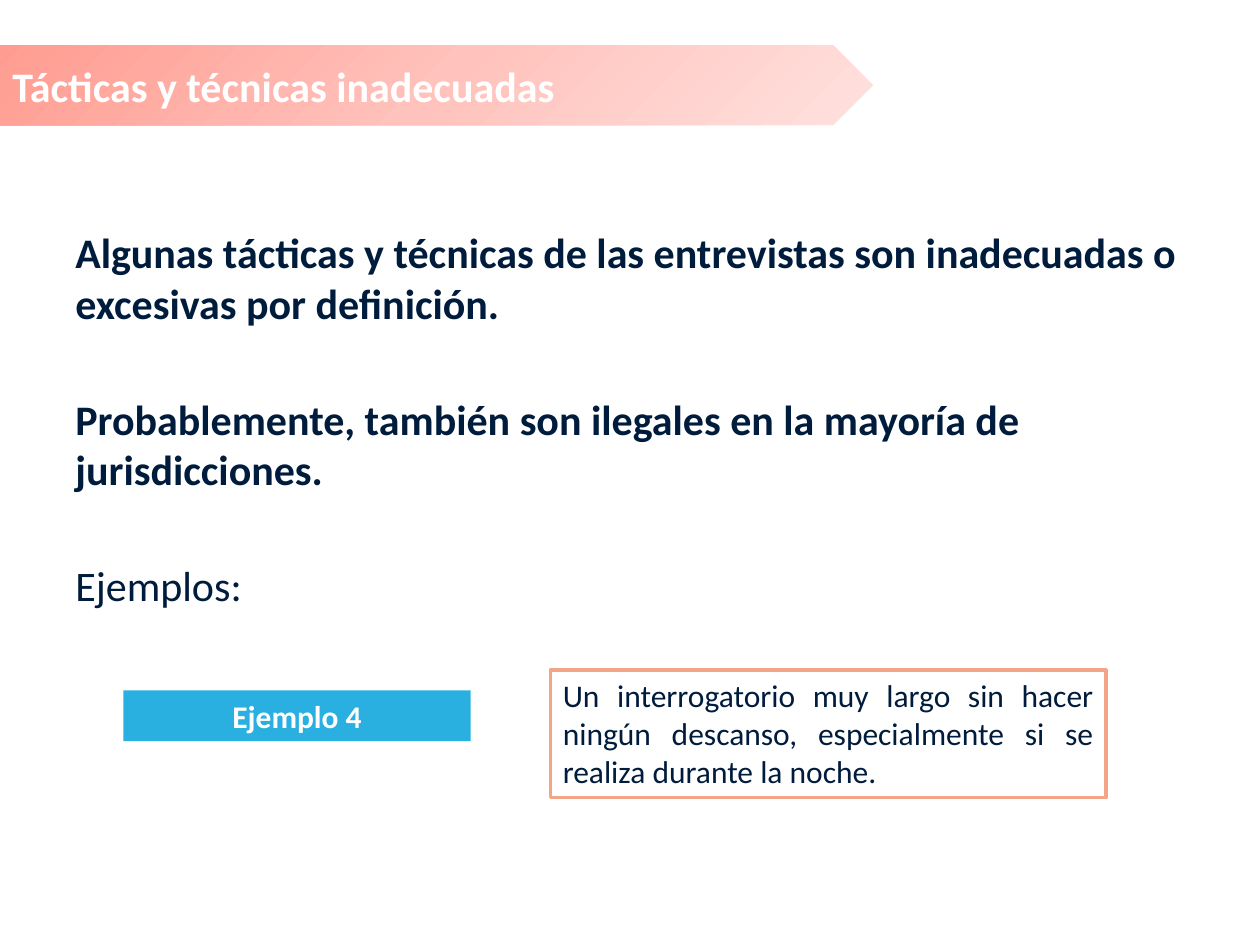
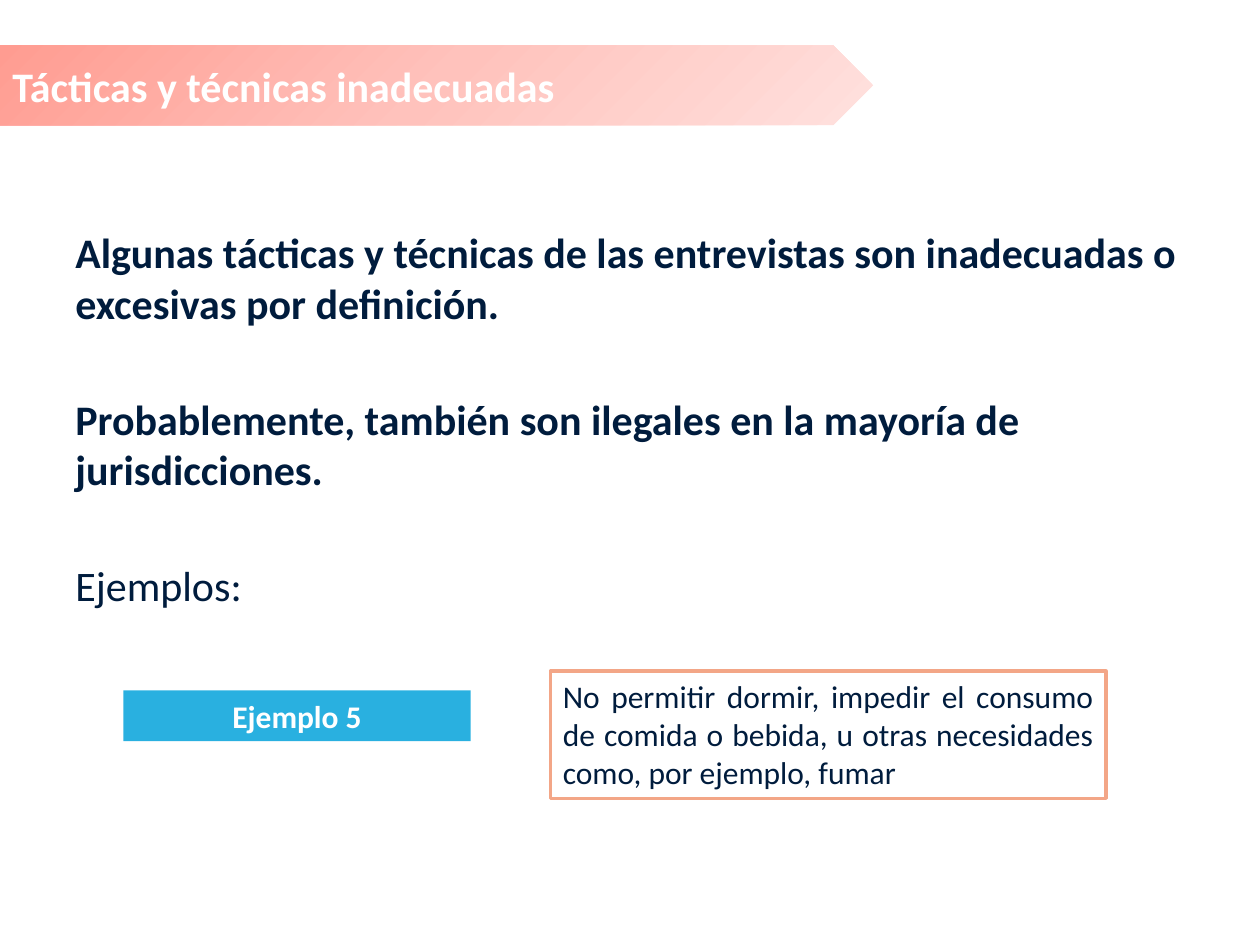
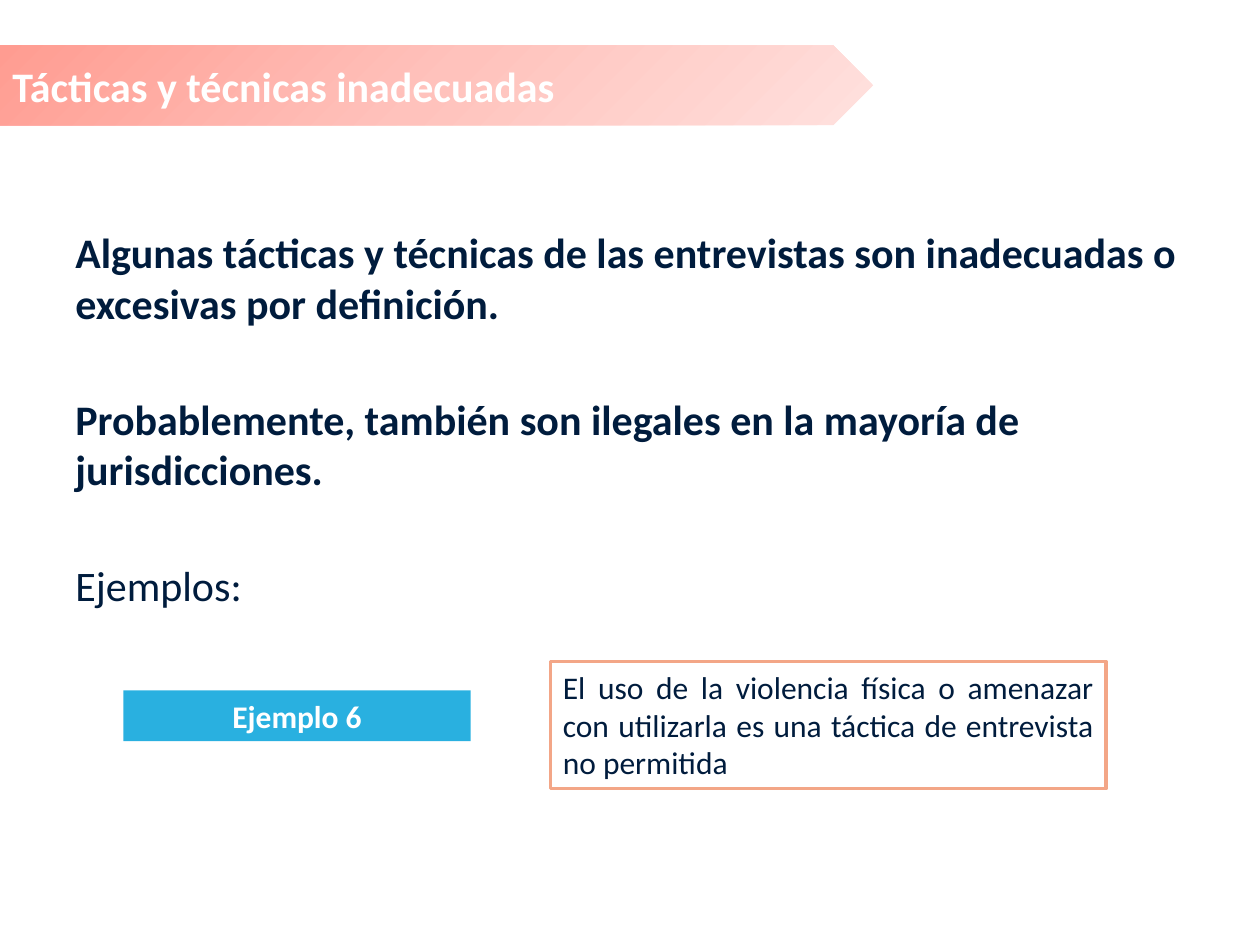
import dataclasses

import pptx
import pptx.dml.color
import pptx.enum.shapes
import pptx.enum.text
import pptx.oxml
import pptx.oxml.ns
import pptx.util
from lxml import etree

Pt = pptx.util.Pt
Shape = pptx.enum.shapes.MSO_SHAPE
Align = pptx.enum.text.PP_ALIGN
Anchor = pptx.enum.text.MSO_ANCHOR
AutoSize = pptx.enum.text.MSO_AUTO_SIZE


@dataclasses.dataclass(frozen=True)
class Theme:
    """Colours, font and sizes shared by the slides."""
    font: str = "Calibri"
    heading_size: float = 24
    example_size: float = 18
    ink: str = "001C3D"
    white: str = "FFFFFF"
    label: str = "00A2DB"
    label_opacity: int = 84
    border: str = "F3A687"
    border_width: float = 2
    banner: tuple = ((0, "FF9C91"), (50, "FFC2BC"), (100, "FFE1DE"))
    paragraph_gap: float = 37.6


THEME = Theme()
TITLE = "Tácticas y técnicas inadecuadas"
STATEMENTS = (
    ("Algunas tácticas y técnicas de las entrevistas son inadecuadas o excesivas por definición.", True),
    ("Probablemente, también son ilegales en la mayoría de jurisdicciones.", True),
    ("Ejemplos:", False),
)
EXAMPLES = (
    ("Ejemplo 4", "Un interrogatorio muy largo sin hacer ningún descanso, especialmente si se realiza durante la noche.", 383),
    ("Ejemplo 5", "No permitir dormir, impedir el consumo de comida o bebida, u otras necesidades como, por ejemplo, fumar", 383.5),
    ("Ejemplo 6", "El uso de la violencia física o amenazar con utilizarla es una táctica de entrevista no permitida", 378),
)


def rgb(value):
    """Turn a hexadecimal string into a colour."""
    return pptx.dml.color.RGBColor.from_string(value)


def write(paragraph, text, *, size, color=THEME.ink, bold=False, align=Align.LEFT, before=0):
    """Put formatted text into a paragraph."""
    paragraph.alignment = align
    paragraph.space_before = Pt(before)
    run = paragraph.add_run()
    run.text = text
    run.font.name = THEME.font
    run.font.size = Pt(size)
    run.font.bold = bold
    run.font.color.rgb = rgb(color)


def add_box(slide, kind, box, fill=None):
    """Add a flat shape without a line, with wrapped text."""
    shape = slide.shapes.add_shape(kind, *map(Pt, box))
    shape.shadow.inherit = False
    shape.line.fill.background()
    shape.text_frame.word_wrap = True
    if fill:
        shape.fill.solid()
        shape.fill.fore_color.rgb = rgb(fill)
    return shape


def add_statements(slide, box):
    """Add the main statements, evenly spaced."""
    frame = slide.shapes.add_textbox(*map(Pt, box)).text_frame
    frame.word_wrap = True
    for index, (text, bold) in enumerate(STATEMENTS):
        paragraph = frame.add_paragraph() if index else frame.paragraphs[0]
        write(paragraph, text, size=THEME.heading_size, bold=bold,
              before=THEME.paragraph_gap if index else 0)


def add_banner(slide, box):
    """Add the title arrow with its radial gradient."""
    banner = add_box(slide, Shape.PENTAGON, box)
    stops = "".join(f'<a:gs pos="{position * 1000}"><a:srgbClr val="{color}"/></a:gs>'
                    for position, color in THEME.banner)
    gradient = pptx.oxml.parse_xml(
        f'<a:gradFill {pptx.oxml.ns.nsdecls("a")} rotWithShape="1"><a:gsLst>{stops}</a:gsLst>'
        '<a:path path="circle"><a:fillToRect r="100000" b="100000"/></a:path></a:gradFill>')
    geometry = banner.element.spPr.find(pptx.oxml.ns.qn("a:prstGeom"))
    geometry.addnext(gradient)
    banner.text_frame.vertical_anchor = Anchor.MIDDLE
    write(banner.text_frame.paragraphs[0], TITLE,
          size=THEME.heading_size, color=THEME.white, bold=True)


def add_label(slide, box, text):
    """Add the translucent example label."""
    label = add_box(slide, Shape.RECTANGLE, box, THEME.label)
    color = label.element.spPr.find(".//" + pptx.oxml.ns.qn("a:srgbClr"))
    etree.SubElement(color, pptx.oxml.ns.qn("a:alpha"), val=str(THEME.label_opacity * 1000))
    fit_text(label)
    write(label.text_frame.paragraphs[0], text, size=THEME.example_size,
          color=THEME.white, bold=True, align=Align.CENTER)


def add_description(slide, box, text):
    """Add the outlined example description."""
    panel = add_box(slide, Shape.RECTANGLE, box, THEME.white)
    panel.line.color.rgb = rgb(THEME.border)
    panel.line.width = Pt(THEME.border_width)
    fit_text(panel)
    write(panel.text_frame.paragraphs[0], text, size=THEME.example_size, align=Align.JUSTIFY)


def fit_text(shape):
    """Start text at the top and let the shape grow with it."""
    shape.text_frame.vertical_anchor = Anchor.TOP
    shape.text_frame.auto_size = AutoSize.SHAPE_TO_FIT_TEXT


def add_example_slide(presentation, label, description, description_top):
    """Add one slide with the statements and an example."""
    slide = presentation.slides.add_slide(presentation.slide_layouts[6])
    add_statements(slide, (36, 126, 648, 246))
    add_banner(slide, (0, 26, 499, 45.5))
    add_label(slide, (70.5, 394.5, 198.5, 29), label)
    add_description(slide, (314.5, description_top, 317.5, 72.7), description)


def main():
    """Build and save the presentation."""
    presentation = pptx.Presentation()
    presentation.slide_width = Pt(720)
    presentation.slide_height = Pt(540)
    for example in EXAMPLES:
        add_example_slide(presentation, *example)
    presentation.save("out.pptx")


if __name__ == "__main__":
    main()
